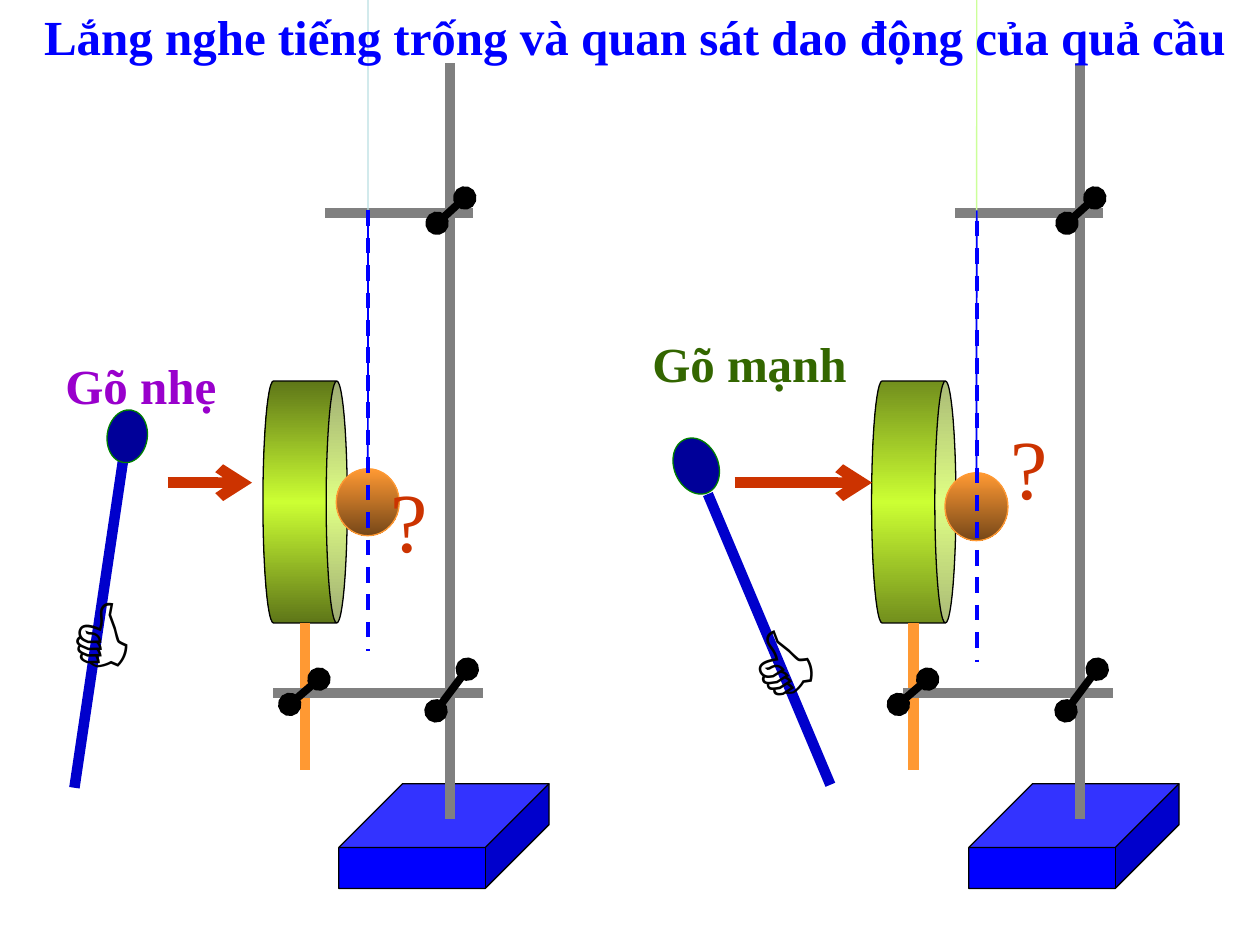
"""Build the slide comparing a soft and a strong drum beat."""
from dataclasses import dataclass

from lxml import etree
from pptx import Presentation
from pptx.dml.color import RGBColor
from pptx.enum.dml import MSO_LINE
from pptx.enum.shapes import MSO_CONNECTOR, MSO_SHAPE
from pptx.enum.text import MSO_AUTO_SIZE
from pptx.oxml.ns import qn
from pptx.util import Cm, Pt

CAN, CUBE, ELLIPSE = MSO_SHAPE.CAN, MSO_SHAPE.CUBE, MSO_SHAPE.OVAL
STRAIGHT = MSO_CONNECTOR.STRAIGHT
DASH = MSO_LINE.DASH
FIT_SHAPE = MSO_AUTO_SIZE.SHAPE_TO_FIT_TEXT
FONT = "Times New Roman"
BLUE, GREY, BLACK, ORANGE, RED = "0000FF", "808080", "000000", "FF9933", "CC3300"
STAND_SHIFT, DRUM_SHIFT = 12.7, 12.27
TOP_SIDE = 0

Box = tuple[float, float, float, float]
Point = tuple[float, float]


@dataclass
class Rod:
    """A straight bar of a stand, with optional round ends."""
    start: Point
    end: Point
    color: str = GREY
    width: float = 6
    ends: str = ""


@dataclass
class Beater:
    """A drum stick with its head and the hand that holds it."""
    start: Point
    end: Point
    head: Box
    head_rotation: float
    hand: Point
    hand_rotation: float


@dataclass
class Label:
    """A piece of text in a box."""
    text: str
    box: Box
    color: str
    size: int = 28
    bold: bool = True
    wrap: bool = True
    rotation: float = 0


@dataclass
class Experiment:
    """One drum with its stand, ball, beater and captions."""
    shift: int
    drum_edge: str
    ball_top: float
    ball_height: float
    thread_color: str
    string_top: float
    arrow: tuple[float, float]
    beater: Beater
    labels: list[Label]


def clamp(start: Point, end: Point) -> Rod:
    """Return a black clamp with round ends."""
    return Rod(start, end, BLACK, 4.5, "oval")


STAND_RODS = [
    Rod((9.73, 13.97), (5.51, 13.97)),
    Rod((9.07, 16.51), (9.07, 1.27)),
    Rod((9.53, 4.29), (6.55, 4.29)),
    clamp((9.42, 13.49), (8.79, 14.33)),
    clamp((9.37, 3.99), (8.81, 4.5)),
]
DRUM_ROD = Rod((6.15, 12.55), (6.15, 15.52), ORANGE)
DRUM_CLAMP = clamp((6.43, 13.69), (5.84, 14.2))
EXPERIMENTS = [
    Experiment(
        1, "728F1D", 9.53, 1.37, "CCFF99", 4.45, (14.81, 17.58),
        Beater((16.74, 15.82), (14.27, 9.96), (13.59, 8.81, 0.89, 1.17), 157,
               (14.88, 12.17), 171.7),
        [Label("?", (20.12, 8.26, 1.47, 2.29), RED, 48, False),
         Label("Gõ mạnh", (12.9, 6.6, 5.08, 1.45), "336600")]),
    Experiment(
        0, "5E7618", 9.45, 1.35, "BBE0E3", 4.24, (3.38, 5.08),
        Beater((1.5, 15.88), (2.51, 9.09), (2.16, 8.26, 0.81, 1.07), 188.5,
               (1.07, 11.63), 203.2),
        [Label("?", (7.62, 9.32, 1.47, 2.29), RED, 48, False),
         Label("Gõ nhẹ", (1.07, 7.04, 4.24, 1.45), "9900CC")]),
]
TITLE = Label("Lắng nghe tiếng trống và quan sát dao động của quả cầu",
              (0.64, 0, 24.77, 1.45), BLUE)


def paint(target, color: str) -> None:
    """Give a fill or a font a solid colour."""
    if hasattr(target, "solid"):
        target.solid()
        target.fore_color.rgb = RGBColor.from_string(color)
    else:
        target.color.rgb = RGBColor.from_string(color)


def paint_gradient(shape, colors: list[str], angle: float) -> None:
    """Fill a shape with evenly spaced gradient stops."""
    shape.fill.gradient()
    shape.fill.gradient_angle = angle
    stops = next(shape._element.iter(qn("a:gsLst")))
    for stop in list(stops):
        stops.remove(stop)
    for index, color in enumerate(colors):
        position = str(100000 * index // (len(colors) - 1))
        stop = etree.SubElement(stops, qn("a:gs"), pos=position)
        etree.SubElement(stop, qn("a:srgbClr"), val=color)


def add_solid(shapes, kind, box: Box, edge: str, rotation: float = 0):
    """Add a preset shape with a thin outline."""
    shape = shapes.add_shape(kind, *map(Cm, box))
    shape.shadow.inherit = False
    shape.rotation = rotation
    paint(shape.line, edge) if hasattr(shape.line, "solid") else paint(shape.line.fill, edge)
    shape.line.width = Pt(0.75)
    return shape


def add_rod(shapes, rod: Rod, shift: float = 0, head: str = "", dash=None):
    """Add a straight connector without a shadow."""
    (x1, y1), (x2, y2) = rod.start, rod.end
    connector = shapes.add_connector(STRAIGHT, Cm(x1 + shift), Cm(y1), Cm(x2 + shift), Cm(y2))
    line = connector.line
    paint(line.fill, rod.color)
    line.width = Pt(rod.width)
    if dash:
        line.dash_style = dash
    outline = connector._element.spPr.find(qn("a:ln"))
    for tag, kind in (("a:headEnd", rod.ends), ("a:tailEnd", rod.ends or head)):
        if kind:
            etree.SubElement(outline, qn(tag), type=kind)
    etree.SubElement(connector._element.spPr, qn("a:effectLst"))
    return connector


def add_label(shapes, label: Label) -> None:
    """Add a text box holding one formatted run."""
    text_box = shapes.add_textbox(*map(Cm, label.box))
    text_box.rotation = label.rotation
    frame = text_box.text_frame
    for name, value in {"word_wrap": label.wrap, "auto_size": FIT_SHAPE}.items():
        setattr(frame, name, value)
    run = frame.paragraphs[0].add_run()
    run.text = label.text
    formats = {"name": FONT, "size": Pt(label.size), "bold": label.bold}
    for name, value in formats.items():
        setattr(run.font, name, value)
    paint(run.font, label.color)


def add_apparatus(slide, experiment: Experiment) -> None:
    """Add the drum and the stand as one group."""
    shapes = slide.shapes.add_group_shape().shapes
    drum_shift = DRUM_SHIFT * experiment.shift
    stand_shift = STAND_SHIFT * experiment.shift
    drum = add_solid(shapes, CAN, (3.71 + drum_shift, 9.27, 4.88, 1.7), BLACK, 90)
    drum.adjustments[0] = 0.25
    paint_gradient(drum, [experiment.drum_edge, "CCFF33", experiment.drum_edge], 0)
    base = add_solid(shapes, CUBE, (6.83 + stand_shift, 15.8, 4.24, 2.11), BLACK)
    base.adjustments[0] = 0.61
    paint(base.fill, BLUE)
    add_rod(shapes, DRUM_ROD, drum_shift)
    for rod in STAND_RODS:
        add_rod(shapes, rod, stand_shift)
    add_rod(shapes, DRUM_CLAMP, drum_shift)


def add_pendulum(slide, experiment: Experiment) -> None:
    """Add the ball and the threads joined to its top."""
    shapes = slide.shapes.add_group_shape().shapes
    shift, top = DRUM_SHIFT * experiment.shift, experiment.ball_top
    ball = add_solid(shapes, ELLIPSE, (6.78 + shift, top, 1.27, experiment.ball_height), ORANGE)
    paint_gradient(ball, [ORANGE, "764718"], 270)
    for end, color, width in ((0, experiment.thread_color, 0.75), (4.24, BLUE, 1)):
        thread = add_rod(shapes, Rod((7.42, top), (7.42, end), color, width), shift)
        thread.begin_connect(ball, TOP_SIDE)


def add_beater(slide, beater: Beater) -> None:
    """Add the stick, its head and the hand as one group."""
    shapes = slide.shapes.add_group_shape().shapes
    add_rod(shapes, Rod(beater.start, beater.end, "0000CC"))
    head = add_solid(shapes, ELLIPSE, beater.head, "008000", beater.head_rotation)
    paint(head.fill, "000099")
    add_label(shapes, Label("👎", (*beater.hand, 1.93, 2.79), BLACK, 60, False, False,
                            beater.hand_rotation))


def main() -> None:
    """Draw both experiments and save the presentation."""
    presentation = Presentation()
    presentation.slide_width, presentation.slide_height = Cm(25.4), Cm(19.05)
    slide = presentation.slides.add_slide(presentation.slide_layouts[6])
    for add_part in (add_apparatus, add_pendulum):
        for experiment in EXPERIMENTS:
            add_part(slide, experiment)
    for experiment in EXPERIMENTS:
        start, end = experiment.arrow
        add_rod(slide.shapes, Rod((start, 9.73), (end, 9.73), RED), head="arrow")
        add_beater(slide, experiment.beater)
        for label in experiment.labels:
            add_label(slide.shapes, label)
    add_label(slide.shapes, TITLE)
    for experiment in EXPERIMENTS:
        top = experiment.string_top
        string = Rod((7.42, top), (7.42, top + 8.89), BLUE, 2.25)
        add_rod(slide.shapes, string, DRUM_SHIFT * experiment.shift, dash=DASH)
    presentation.save("out.pptx")


if __name__ == "__main__":
    main()
